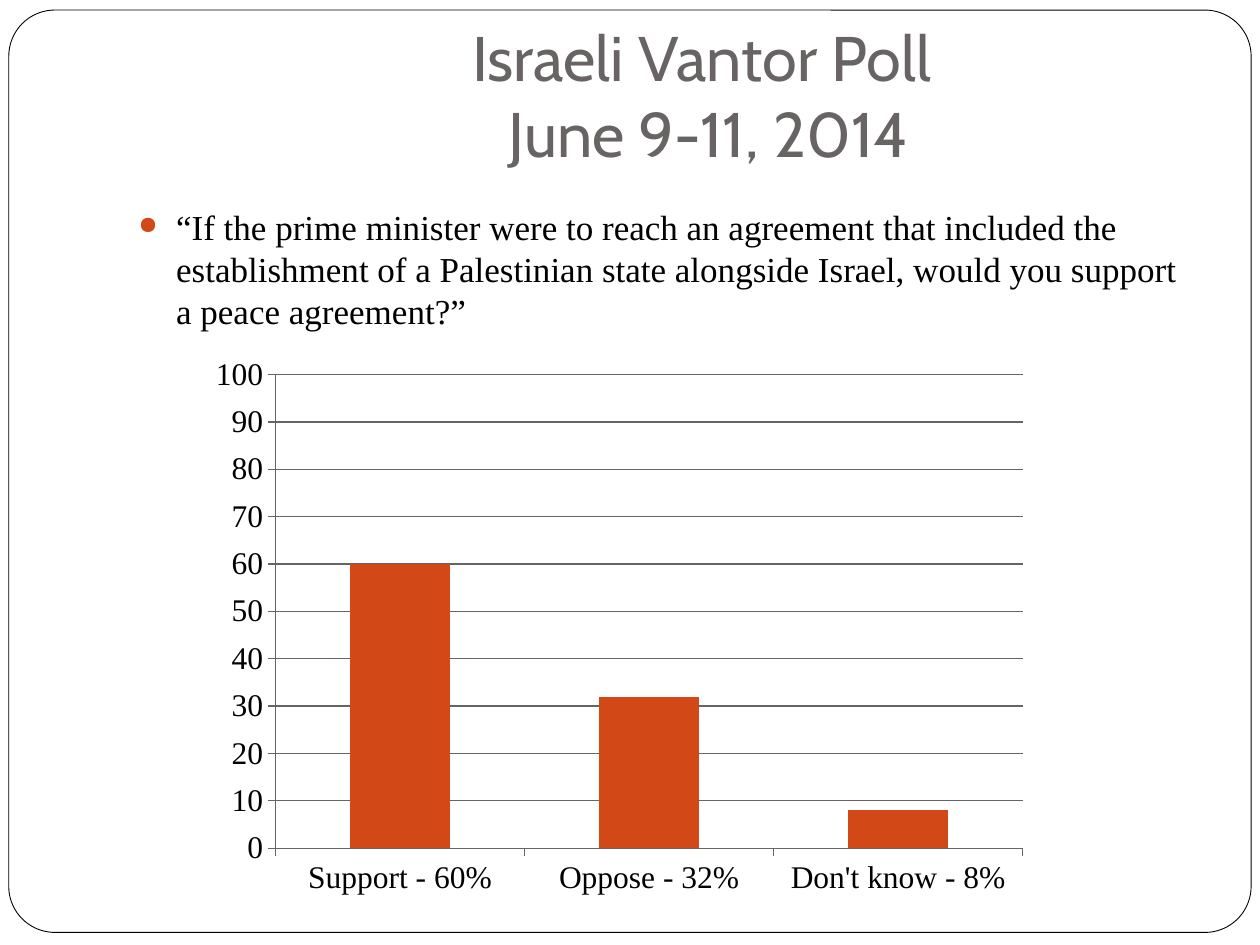
from lxml import etree
from pptx import Presentation
from pptx.chart.data import CategoryChartData
from pptx.dml.color import RGBColor
from pptx.enum.chart import XL_CHART_TYPE, XL_TICK_MARK
from pptx.enum.shapes import MSO_SHAPE
from pptx.enum.text import MSO_ANCHOR, PP_ALIGN
from pptx.oxml.ns import qn
from pptx.util import Inches, Pt

WHITE = RGBColor(0xFF, 0xFF, 0xFF)
BLACK = RGBColor(0x00, 0x00, 0x00)
GREY = RGBColor(0x69, 0x64, 0x64)
ORANGE = RGBColor(0xD3, 0x48, 0x17)
TITLE_FONT = "Cabin"
BODY_FONT = "Times New Roman"
ROUNDED = MSO_SHAPE.ROUNDED_RECTANGLE
STACKED = XL_CHART_TYPE.COLUMN_STACKED
TICK_OUTSIDE = XL_TICK_MARK.OUTSIDE
BOTTOM = MSO_ANCHOR.BOTTOM
CENTER = PP_ALIGN.CENTER

QUESTION = (
    "“If the prime minister were to reach an agreement that included the "
    "establishment of a Palestinian state alongside Israel, would you support "
    "a peace agreement?”"
)
RESULTS = {"Support": 60, "Oppose": 32, "Don't know": 8}


def set_font(font, name, size, color):
    font.name = name
    font.size = Pt(size)
    font.color.rgb = color


def add_frame(slide, *box):
    frame = slide.shapes.add_shape(ROUNDED, *map(Inches, box))
    frame.adjustments[0] = 0.05
    frame.shadow.inherit = False
    frame.fill.solid()
    frame.fill.fore_color.rgb = WHITE
    frame.line.color.rgb = BLACK
    frame.line.width = Pt(0.5)


def add_text(slide, text, *box):
    text_frame = slide.shapes.add_textbox(*map(Inches, box)).text_frame
    text_frame.word_wrap = True
    text_frame.text = text
    return text_frame


def add_title(slide, *box):
    text_frame = add_text(slide, "", *box)
    text_frame.vertical_anchor = BOTTOM
    text_frame.margin_bottom = Inches(0.1)
    paragraph = text_frame.paragraphs[0]
    paragraph.text = "Israeli Vantor Poll \vJune 9-11, 2014"
    paragraph.alignment = CENTER
    set_font(paragraph.font, TITLE_FONT, 36, GREY)


def add_bullet(paragraph, color):
    properties = paragraph._p.get_or_add_pPr()
    properties.set("marL", str(Inches(0.3)))
    properties.set("indent", str(-Inches(0.3)))
    bullet_color = etree.Element(qn("a:buClr"))
    etree.SubElement(bullet_color, qn("a:srgbClr"), val=str(color))
    bullet_parts = [
        bullet_color,
        etree.Element(qn("a:buSzPct"), val="70000"),
        etree.Element(qn("a:buChar"), char="●"),
    ]
    default_run = properties.find(qn("a:defRPr"))
    for part in bullet_parts:
        default_run.addprevious(part)


def add_question(slide, *box):
    paragraph = add_text(slide, QUESTION, *box).paragraphs[0]
    paragraph.space_before = Pt(5.8)
    set_font(paragraph.font, BODY_FONT, 20, BLACK)
    add_bullet(paragraph, ORANGE)


def style_axis(axis):
    axis.major_tick_mark = TICK_OUTSIDE
    axis.format.line.color.rgb = GREY
    axis.format.line.width = Pt(0.75)


def add_poll_chart(slide, *box):
    data = CategoryChartData()
    data.categories = [f"{answer} - {share}%" for answer, share in RESULTS.items()]
    data.add_series("Series 1", list(RESULTS.values()))
    chart = slide.shapes.add_chart(STACKED, *map(Inches, box), data).chart
    chart.has_legend = False
    chart.has_title = False
    set_font(chart.font, BODY_FONT, 18, BLACK)

    style_axis(chart.category_axis)
    value_axis = chart.value_axis
    style_axis(value_axis)
    value_axis.minimum_scale = 0
    value_axis.maximum_scale = 100
    value_axis.major_unit = 10
    value_axis.has_major_gridlines = True
    value_axis.major_gridlines.format.line.color.rgb = GREY
    value_axis.major_gridlines.format.line.width = Pt(0.75)

    plot = chart.plots[0]
    plot.gap_width = 150
    plot.overlap = 100
    plot.vary_by_categories = False
    fill = plot.series[0].format.fill
    fill.solid()
    fill.fore_color.rgb = ORANGE


def main():
    presentation = Presentation()
    presentation.slide_width = Inches(10)
    presentation.slide_height = Inches(7.5)
    slide = presentation.slides.add_slide(presentation.slide_layouts[6])
    add_frame(slide, 0.07, 0.08, 9.86, 7.32)
    add_title(slide, 1.75, 0.07, 7.75, 1.38)
    add_question(slide, 1, 1.58, 8.5, 1.15)
    add_poll_chart(slide, 1.58, 2.75, 6.67, 4.44)
    presentation.save("out.pptx")


if __name__ == "__main__":
    main()
